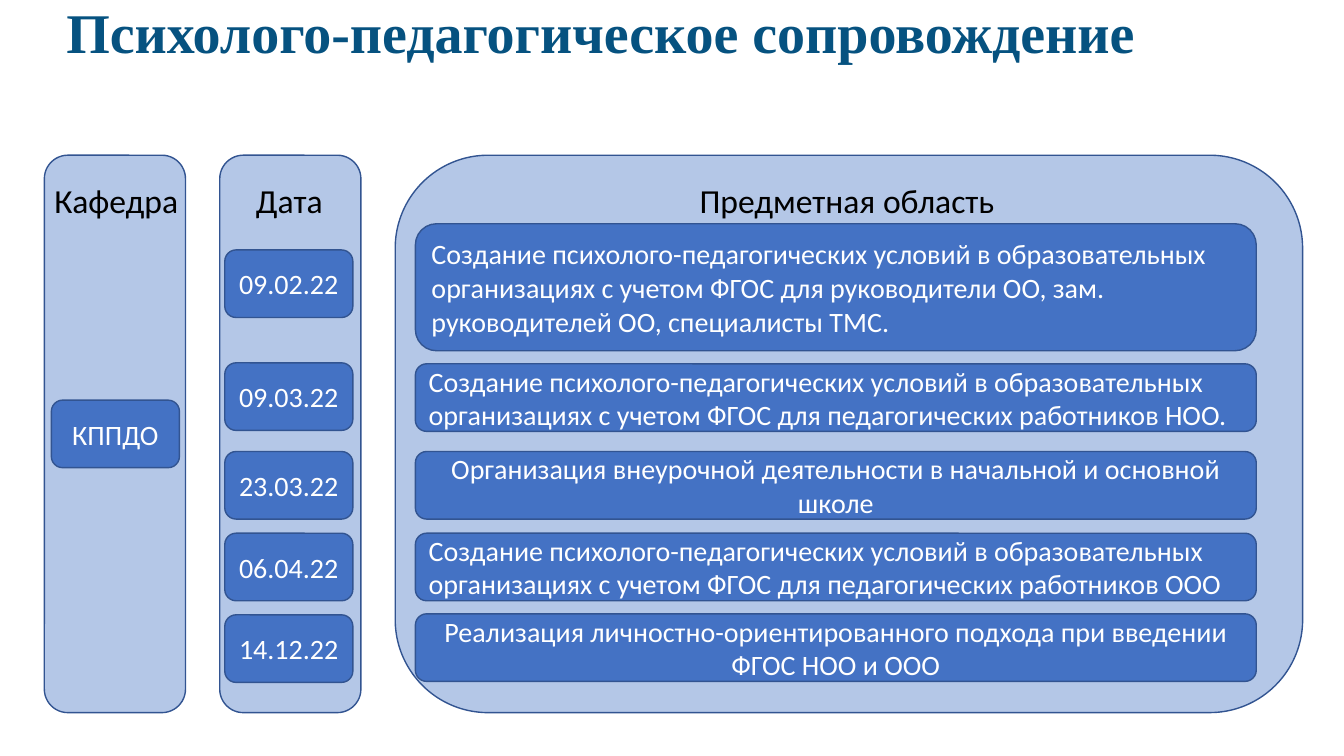
from pptx import Presentation
from pptx.dml.color import RGBColor
from pptx.enum.shapes import MSO_SHAPE
from pptx.enum.text import MSO_ANCHOR, PP_ALIGN
from pptx.util import Inches, Pt

ROUNDED = MSO_SHAPE.ROUNDED_RECTANGLE
TOP, MIDDLE = MSO_ANCHOR.TOP, MSO_ANCHOR.MIDDLE
LEFT, CENTER = PP_ALIGN.LEFT, PP_ALIGN.CENTER

COLORS = {
    "title": "065280",
    "column": "B4C7E7",
    "card": "4472C4",
    "outline": "325491",
    "heading": "000000",
    "card_text": "FFFFFF",
}

TITLE = "Психолого-педагогическое сопровождение"
DEPARTMENT = "КППДО"
CONDITIONS = ("Создание психолого-педагогических условий в образовательных "
              "организациях с учетом ФГОС для ")

# column left, column width, heading, heading left, heading width
COLUMNS = [
    (0.44, 1.4, "Кафедра", 0.44, 1.45),
    (2.18, 1.4, "Дата", 2.44, 0.87),
    (3.92, 9, "Предметная область", 6.84, 3.15),
]

# date, date top, subject, subject top, subject height, alignment
SESSIONS = [
    ("09.02.22", 2.48,
     CONDITIONS + "руководители ОО, зам. руководителей ОО, специалисты ТМС.",
     2.22, 1.26, LEFT),
    ("09.03.22", 3.6, CONDITIONS + "педагогических работников НОО.",
     3.61, 0.67, LEFT),
    ("23.03.22", 4.48,
     "Организация внеурочной деятельности в начальной и основной школе",
     4.48, 0.67, CENTER),
    ("06.04.22", 5.29, CONDITIONS + "педагогических работников ООО",
     5.29, 0.67, LEFT),
    ("14.12.22", 6.1,
     "Реализация личностно-ориентированного подхода при введении ФГОС НОО и ООО",
     6.09, 0.67, CENTER),
]

COLUMN_TOP, COLUMN_HEIGHT = 1.54, 5.53
HEADING_TOP, HEADING_HEIGHT = 1.74, 0.51
DEPARTMENT_LEFT, DEPARTMENT_TOP = 0.51, 3.97
DATE_LEFT, SMALL_WIDTH, SMALL_HEIGHT = 2.23, 1.27, 0.67
SUBJECT_LEFT, SUBJECT_WIDTH = 4.12, 8.34


def rgb(name):
    return RGBColor.from_string(COLORS[name])


def write(shape, text, size, color, align=LEFT, anchor=TOP,
          font="Calibri", bold=False, wrap=True):
    frame = shape.text_frame
    frame.word_wrap = wrap
    frame.vertical_anchor = anchor
    para = frame.paragraphs[0]
    para.alignment = align
    span = para.add_run()
    span.text = text
    span.font.name = font
    span.font.size = Pt(size)
    span.font.bold = bold
    span.font.color.rgb = rgb(color)
    return para


def add_panel(page, left, top, width, height, fill):
    panel = page.shapes.add_shape(
        ROUNDED, Inches(left), Inches(top), Inches(width), Inches(height))
    panel.shadow.inherit = False
    panel.fill.solid()
    panel.fill.fore_color.rgb = rgb(fill)
    panel.line.color.rgb = rgb("outline")
    panel.line.width = Pt(1)
    return panel


def add_card(page, left, top, width, height, text, align=CENTER):
    card = add_panel(page, left, top, width, height, "card")
    write(card, text, 20, "card_text", align, MIDDLE)


def add_text_box(page, left, top, width, height):
    return page.shapes.add_textbox(
        Inches(left), Inches(top), Inches(width), Inches(height))


def main():
    deck = Presentation()
    deck.slide_width, deck.slide_height = Inches(13.33), Inches(7.5)
    page = deck.slides.add_slide(deck.slide_layouts[6])

    title = write(add_text_box(page, 0.56, 0, 11.76, 0.91), TITLE, 40, "title",
                  font="Times New Roman", bold=True)
    title.line_spacing = 0.9

    for left, width, heading, heading_left, heading_width in COLUMNS:
        add_panel(page, left, COLUMN_TOP, width, COLUMN_HEIGHT, "column")
        box = add_text_box(page, heading_left, HEADING_TOP,
                           heading_width, HEADING_HEIGHT)
        write(box, heading, 24, "heading", wrap=False)

    add_card(page, DEPARTMENT_LEFT, DEPARTMENT_TOP,
             SMALL_WIDTH, SMALL_HEIGHT, DEPARTMENT)
    for date, date_top, subject, top, height, align in SESSIONS:
        add_card(page, DATE_LEFT, date_top, SMALL_WIDTH, SMALL_HEIGHT, date)
        add_card(page, SUBJECT_LEFT, top, SUBJECT_WIDTH, height, subject, align)

    deck.save("out.pptx")


if __name__ == "__main__":
    main()
